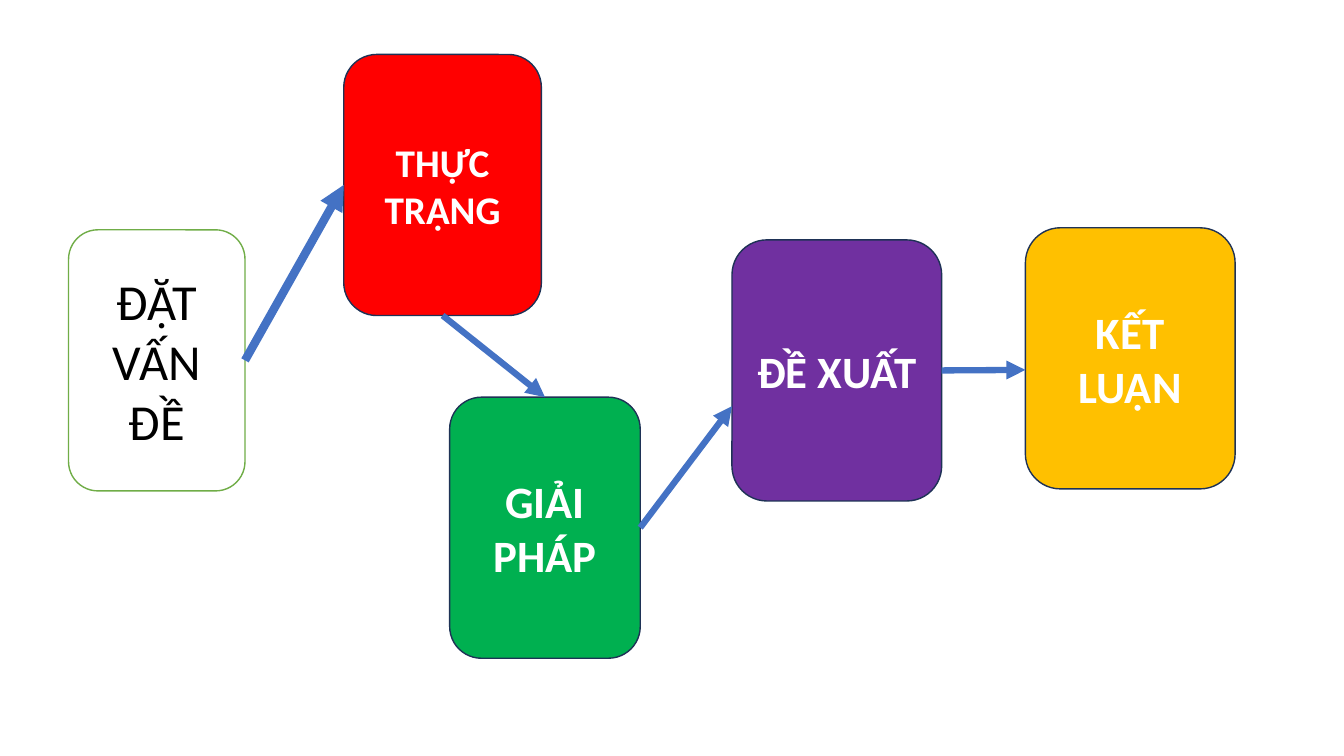
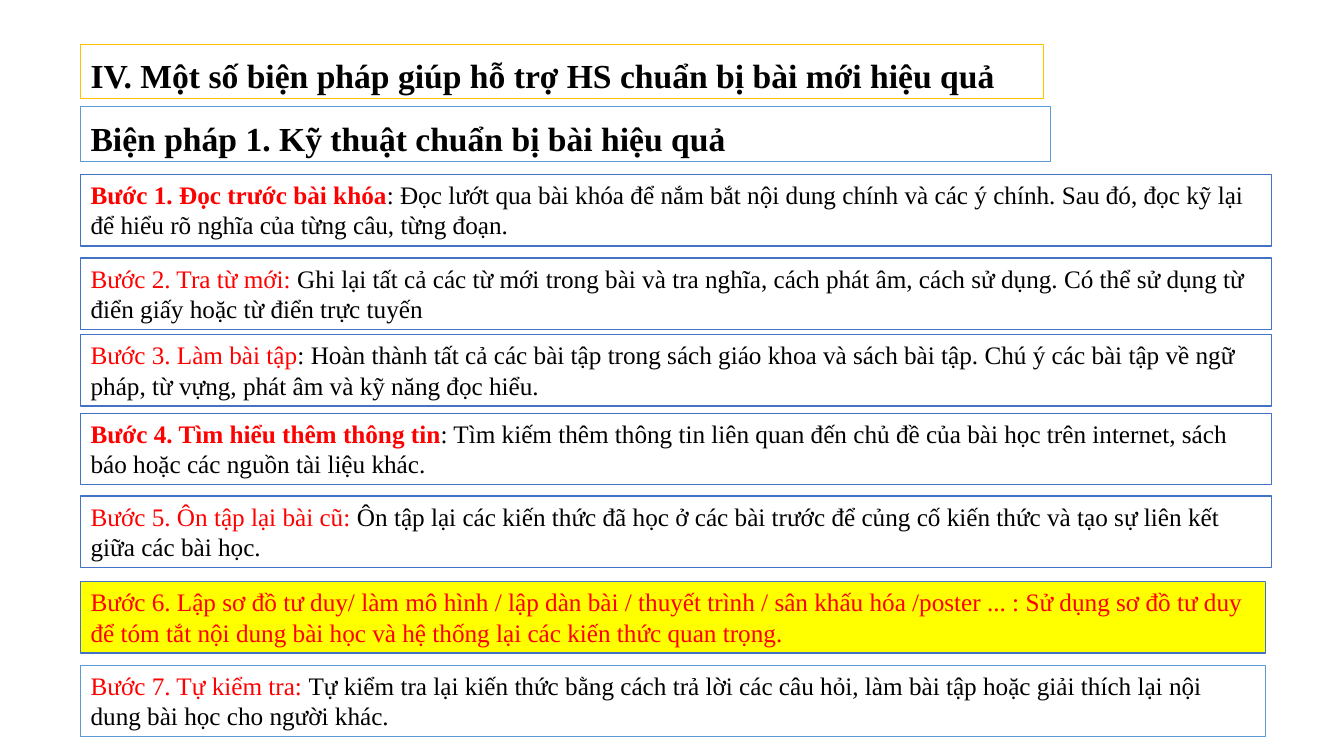
import pptx
import pptx.util
import pptx.dml.color
import pptx.enum.shapes
import pptx.enum.text
import pptx.oxml.ns
from lxml import etree

Inches = pptx.util.Inches
Pt = pptx.util.Pt
SHAPES = pptx.enum.shapes.MSO_SHAPE
ALIGN = pptx.enum.text.PP_ALIGN
ANCHOR = pptx.enum.text.MSO_ANCHOR
qn = pptx.oxml.ns.qn

COLOURS = {
    "white": "FFFFFF", "black": "000000", "red": "FF0000", "green": "00B050",
    "purple": "7030A0", "amber": "FFC000", "yellow": "FFFF00",
    "leaf": "70AD47", "navy": "1E3256", "blue": "4472C4", "sky": "5B9BD5",
}
TOP, LEFT, BOTTOM, RIGHT = range(4)

# Format values for each kind of text
STAGE_FRAME = {"word_wrap": True, "vertical_anchor": ANCHOR.MIDDLE}
PANEL_FRAME = {"word_wrap": True, "vertical_anchor": ANCHOR.TOP,
               "auto_size": pptx.enum.text.MSO_AUTO_SIZE.SHAPE_TO_FIT_TEXT}
STAGE_PARA = {"alignment": ALIGN.CENTER}
HEADING_PARA = {"alignment": ALIGN.JUSTIFY, "line_spacing": 1.15, "space_after": Pt(8)}
STEP_PARA = {"alignment": ALIGN.LEFT}

# Stages: text, left, top, width, fill, line, text colour, size, bold
STAGE_HEIGHT = 2.59
STAGES = [
    ("ĐẶT VẤN ĐỀ", 0.68, 2.28, 1.75, "white", "leaf", "black", 36, False),
    ("THỰC TRẠNG", 3.41, 0.54, 1.96, "red", "navy", "white", 28, True),
    ("GIẢI PHÁP", 4.46, 3.94, 1.89, "green", "navy", "white", 32, True),
    ("ĐỀ XUẤT", 7.26, 2.38, 2.08, "purple", "navy", "white", 32, True),
    ("KẾT LUẬN", 10.17, 2.26, 2.08, "amber", "navy", "white", 32, True),
]

# Arrows: start stage and side, end stage and side (None if free), end point, width
ARROWS = [
    (0, RIGHT, 1, LEFT, (3.41, 1.84), 6),
    (1, BOTTOM, 2, TOP, (5.4, 3.94), 4.5),
    (2, RIGHT, None, None, (7.26, 4.03), 4.5),
    (3, RIGHT, None, None, (10.17, 3.67), 4.5),
]

# Headings: text, top, width, line
PANEL_LEFT = 0.8
HEADING_HEIGHT = 0.54
HEADINGS = [
    ("IV. Một số biện pháp giúp hỗ trợ HS chuẩn bị bài mới hiệu quả", 0.44, 9.55, "amber"),
    ("Biện pháp 1. Kỹ thuật chuẩn bị bài hiệu quả", 1.06, 9.62, "sky"),
]

# Steps: label, bold label, explanation, top, width, fill, line
STEP_HEIGHT = 0.71
STEPS = [
    ("Bước 1. Đọc trước bài khóa", True,
     ": Đọc lướt qua bài khóa để nắm bắt nội dung chính và các ý chính. "
     "Sau đó, đọc kỹ lại để hiểu rõ nghĩa của từng câu, từng đoạn.",
     1.73, 11.81, "white", "blue"),
    ("Bước 2. Tra từ mới: ", False,
     "Ghi lại tất cả các từ mới trong bài và tra nghĩa, cách phát âm, cách sử dụng. "
     "Có thể sử dụng từ điển giấy hoặc từ điển trực tuyến",
     2.56, 11.81, "white", "blue"),
    ("Bước 3. Làm bài tập", False,
     ": Hoàn thành tất cả các bài tập trong sách giáo khoa và sách bài tập. "
     "Chú ý các bài tập về ngữ pháp, từ vựng, phát âm và kỹ năng đọc hiểu.",
     3.32, 11.81, "white", "blue"),
    ("Bước 4. Tìm hiểu thêm thông tin", True,
     ": Tìm kiếm thêm thông tin liên quan đến chủ đề của bài học trên internet, "
     "sách báo hoặc các nguồn tài liệu khác.",
     4.1, 11.81, "white", "blue"),
    ("Bước 5. Ôn tập lại bài cũ: ", False,
     "Ôn tập lại các kiến thức đã học ở các bài trước để củng cố kiến thức "
     "và tạo sự liên kết giữa các bài học.",
     4.92, 11.81, "white", "blue"),
    ("Bước 6. Lập sơ đồ tư duy/ làm mô hình / lập dàn bài / thuyết trình / "
     "sân khấu hóa /poster ... : Sử dụng sơ đồ tư duy để tóm tắt nội dung bài học "
     "và hệ thống lại các kiến thức quan trọng.", False, "",
     5.77, 11.75, "yellow", "blue"),
    ("Bước 7. Tự kiểm tra: ", False,
     "Tự kiểm tra lại kiến thức bằng cách trả lời các câu hỏi, làm bài tập "
     "hoặc giải thích lại nội dung bài học cho người khác.",
     6.6, 11.75, "white", "sky"),
]


def colour(name):
    return pptx.dml.color.RGBColor.from_string(COLOURS[name])


def apply_format(target, values):
    for name, value in values.items():
        setattr(target, name, value)


def font_format(name, size, bold=False):
    return {"name": name, "size": Pt(size), "bold": bold}


def add_box(page, kind, place, fill, line, frame_format, para_format, spans):
    """Draw a filled box holding one paragraph; spans are (text, colour, font format)."""
    box = page.shapes.add_shape(kind, *map(Inches, place))
    box.shadow.inherit = False
    box.fill.solid()
    box.fill.fore_color.rgb = colour(fill)
    box.line.color.rgb = colour(line)
    box.line.width = Pt(1)
    apply_format(box.text_frame, frame_format)
    para = box.text_frame.paragraphs[0]
    apply_format(para, para_format)
    for text, text_colour, font in spans:
        span = para.add_run()
        span.text = text
        apply_format(span.font, font)
        span.font.color.rgb = colour(text_colour)
    return box


def add_arrow(page, start, start_side, end, end_side, end_point, width):
    """Draw an arrow from the side of a box to a point or the side of another box."""
    x, y = map(Inches, end_point)
    arrow = page.shapes.add_connector(pptx.enum.shapes.MSO_CONNECTOR.STRAIGHT, x, y, x, y)
    arrow.begin_connect(start, start_side)
    if end is not None:
        arrow.end_connect(end, end_side)
    arrow.line.color.rgb = colour("blue")
    arrow.line.width = Pt(width)
    etree.SubElement(arrow.line._get_or_add_ln(), qn("a:tailEnd"), type="triangle")
    etree.SubElement(arrow._element.spPr, qn("a:effectLst"))


def add_panel(page, top, width, height, fill, line, para_format, spans):
    place = (PANEL_LEFT, top, width, height)
    add_box(page, SHAPES.RECTANGLE, place, fill, line, PANEL_FRAME, para_format, spans)


def build_outline(page):
    # Stages
    boxes = []
    for text, left, top, width, fill, line, text_colour, size, bold in STAGES:
        spans = [(text, text_colour, font_format("Calibri", size, bold))]
        place = (left, top, width, STAGE_HEIGHT)
        boxes.append(add_box(page, SHAPES.ROUNDED_RECTANGLE, place, fill, line,
                             STAGE_FRAME, STAGE_PARA, spans))
    # Arrows between them
    for start, start_side, end, end_side, end_point, width in ARROWS:
        target = None if end is None else boxes[end]
        add_arrow(page, boxes[start], start_side, target, end_side, end_point, width)


def build_steps(page):
    # Headings
    for text, top, width, line in HEADINGS:
        spans = [(text, "black", font_format("Times New Roman", 24, True))]
        add_panel(page, top, width, HEADING_HEIGHT, "white", line, HEADING_PARA, spans)
    # Steps
    for label, bold, explanation, top, width, fill, line in STEPS:
        spans = [(label, "red", font_format("Times New Roman", 18, bold))]
        if explanation:
            spans.append((explanation, "black", font_format("Times New Roman", 18)))
        add_panel(page, top, width, STEP_HEIGHT, fill, line, STEP_PARA, spans)


def main():
    deck = pptx.Presentation()
    deck.slide_width = Inches(13.33)
    deck.slide_height = Inches(7.5)
    for build in (build_outline, build_steps):
        build(deck.slides.add_slide(deck.slide_layouts[6]))
    deck.save("out.pptx")


if __name__ == "__main__":
    main()
